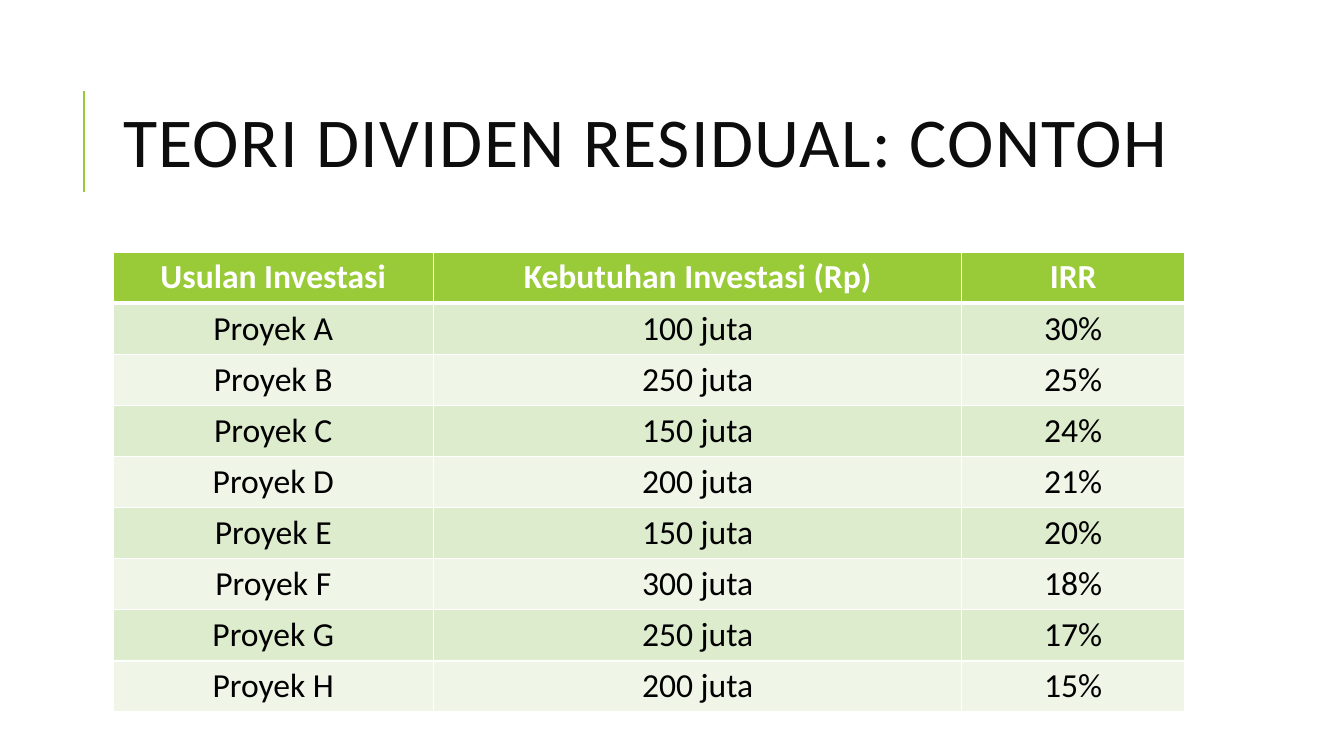
from dataclasses import dataclass

from lxml.etree import SubElement
from pptx import Presentation
from pptx.dml.color import RGBColor
from pptx.enum.shapes import MSO_CONNECTOR
from pptx.enum.text import MSO_ANCHOR, MSO_AUTO_SIZE, PP_ALIGN
from pptx.oxml import parse_xml
from pptx.oxml.ns import nsdecls, qn
from pptx.slide import Slide
from pptx.table import _Cell
from pptx.text.text import _Paragraph
from pptx.util import Emu, Pt

PX = 9144  # EMU in one px, 100 px to the inch
FONT = "Calibri"
COLORS = {
    "green": "99CB38",
    "dark": "DEECCE",
    "light": "EFF6E8",
    "white": "FFFFFF",
    "black": "000000",
    "title": "0D0D0D",
}
LEFT, WIDTH = 112, 1063
COLS = (318, 524, 221)
ROW = 50


@dataclass(frozen=True)
class Look:
    fill: str
    ink: str
    bold: bool = False
    base: int = 1  # width of the lower border in points


@dataclass(frozen=True)
class Project:
    name: str
    need: int
    rate: int

    def texts(self) -> tuple[str, ...]:
        return f"Proyek {self.name}", f"{self.need} juta", f"{self.rate}%"


HEAD = Look("green", "white", True, 3)
BANDS = (Look("dark", "black"), Look("light", "black"))
LABELS = ("Usulan Investasi", "Kebutuhan Investasi (Rp)", "IRR")
PROJECTS = (
    Project("A", 100, 30),
    Project("B", 250, 25),
    Project("C", 150, 24),
    Project("D", 200, 21),
    Project("E", 150, 20),
    Project("F", 300, 18),
    Project("G", 250, 17),
    Project("H", 200, 15),
)


def px(size: int) -> Emu:
    return Emu(size * PX)


def color(name: str) -> RGBColor:
    return RGBColor.from_string(COLORS[name])


def add_text(para: _Paragraph, text: str, size: int, ink: str, bold: bool = False):
    run = para.add_run()
    run.text = text
    font = run.font
    font.name, font.size, font.bold = FONT, Pt(size), bold
    font.color.rgb = color(ink)
    return run


def add_rule(slide: Slide) -> None:
    rule = slide.shapes.add_connector(
        MSO_CONNECTOR.STRAIGHT, px(83), px(190), px(83), px(90)
    )
    rule.line.color.rgb = color("green")
    rule.line.width = Pt(1.5)
    SubElement(rule._element.spPr, qn("a:effectLst"))


def add_title(slide: Slide, text: str) -> None:
    title = slide.shapes.title
    title.left, title.top = px(LEFT), px(64)
    title.width, title.height = px(WIDTH), px(164)
    frame = title.text_frame
    frame.word_wrap = True
    frame.auto_size = MSO_AUTO_SIZE.NONE
    frame.vertical_anchor = MSO_ANCHOR.MIDDLE
    para = frame.paragraphs[0]
    para.alignment = PP_ALIGN.LEFT
    para.line_spacing = 0.8
    run = add_text(para, text, 50, "title")
    run.font._element.set("spc", "100")


def add_edges(cell: _Cell, base: int) -> None:
    props = cell._tc.get_or_add_tcPr()
    for spot, (side, width) in enumerate(zip("LRTB", (1, 1, 1, base))):
        edge = parse_xml(
            f'<a:ln{side} {nsdecls("a")} w="{Pt(width)}"><a:solidFill>'
            f'<a:srgbClr val="{COLORS["white"]}"/></a:solidFill></a:ln{side}>'
        )
        props.insert(spot, edge)


def fill_cell(cell: _Cell, text: str, look: Look) -> None:
    cell.fill.solid()
    cell.fill.fore_color.rgb = color(look.fill)
    add_edges(cell, look.base)
    para = cell.text_frame.paragraphs[0]
    para.alignment = PP_ALIGN.CENTER
    add_text(para, text, 24, look.ink, look.bold)


def add_grid(slide: Slide) -> None:
    rows = [(LABELS, HEAD)]
    rows += [(item.texts(), BANDS[i % 2]) for i, item in enumerate(PROJECTS)]
    table = slide.shapes.add_table(
        len(rows), len(COLS), px(LEFT), px(250), px(WIDTH), px(ROW * len(rows))
    ).table
    for col, width in zip(table.columns, COLS):
        col.width = px(width)
    for row, (texts, look) in zip(table.rows, rows):
        row.height = px(ROW)
        for cell, text in zip(row.cells, texts):
            fill_cell(cell, text, look)


def main() -> None:
    deck = Presentation()
    deck.slide_width, deck.slide_height = px(1333), px(750)
    slide = deck.slides.add_slide(deck.slide_layouts[5])  # title only

    # Heading with its green rule
    add_rule(slide)
    add_title(slide, "TEORI DIVIDEN RESIDUAL: CONTOH")

    # Investment proposals
    add_grid(slide)

    deck.save("out.pptx")


if __name__ == "__main__":
    main()
